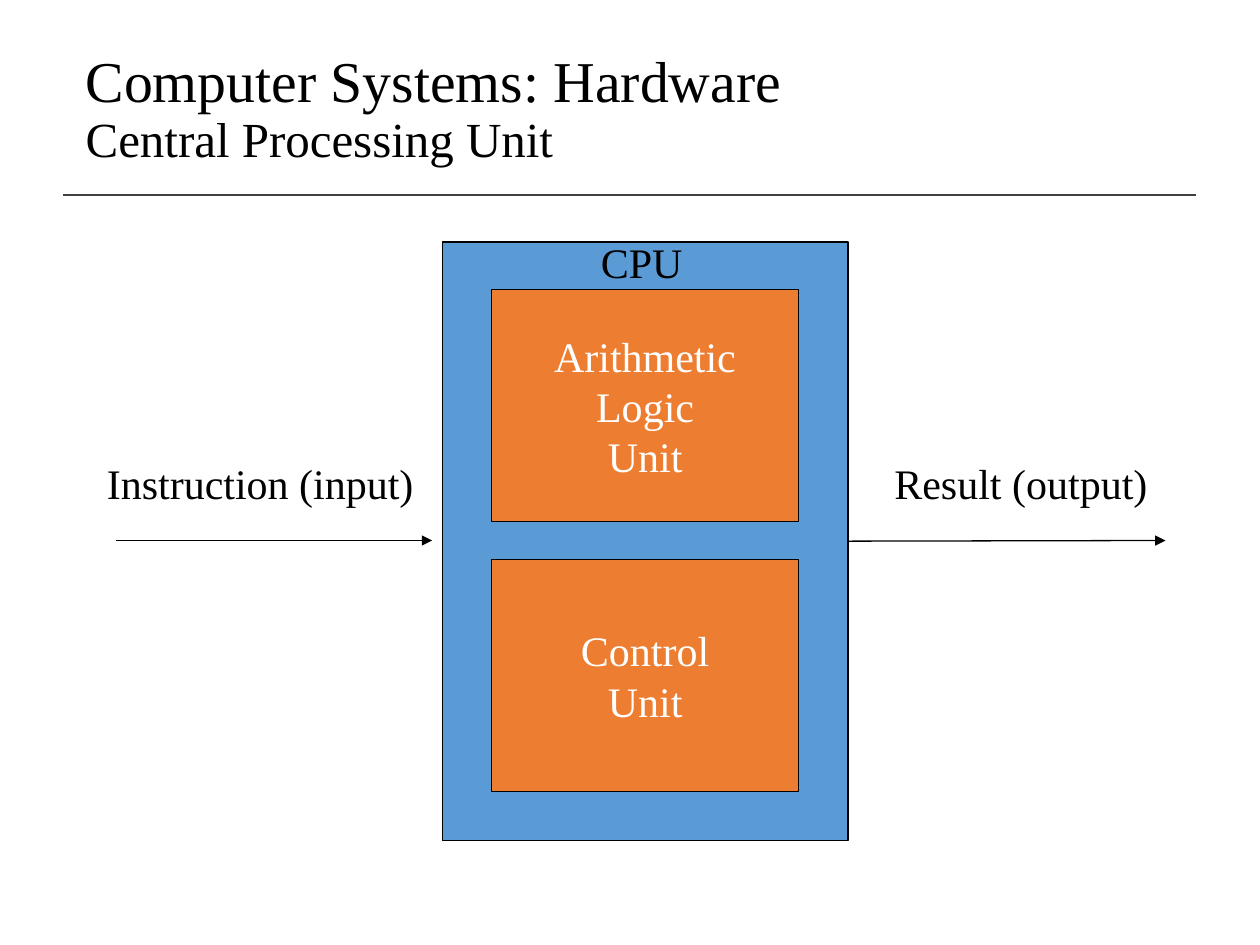
from dataclasses import dataclass
from lxml.etree import SubElement as Sub
from pptx import Presentation
from pptx.dml.color import RGBColor as Rgb
from pptx.enum.shapes import MSO_CONNECTOR as Link, MSO_SHAPE as Form
from pptx.enum.text import MSO_ANCHOR as Anchor, MSO_AUTO_SIZE as Fit, PP_ALIGN as Align
from pptx.oxml.ns import qn
from pptx.util import Inches, Pt


@dataclass(frozen=True)
class Theme:
    font: str = "Times New Roman"
    ink: str = "000000"
    rule: str = "404040"
    blue: str = "5B9BD5"
    orange: str = "ED7D31"
    white: str = "FFFFFF"
    head: int = 33
    sub: int = 28
    text: int = 24
    thin: float = 0.75


class Pen:
    """Draws styled elements on the current slide."""

    def __init__(self, theme, slide):
        self.theme = theme
        self.slide = slide
        self.shapes = slide.shapes

    def group(self):
        self.shapes = self.slide.shapes.add_group_shape().shapes

    def style(self, para, sizes, color):
        for run, size in zip(para.runs, sizes):
            run.font.name = self.theme.font
            run.font.size = Pt(size)
            run.font.color.rgb = Rgb.from_string(color)

    def title(self, text, box):
        shape = self.slide.shapes.title
        shape.left, shape.top, shape.width, shape.height = map(Inches, box)
        frame = shape.text_frame
        frame.text = text
        frame.auto_size = Fit.NONE
        frame.vertical_anchor = Anchor.MIDDLE
        para = frame.paragraphs[0]
        para.alignment = Align.LEFT
        para.line_spacing = 0.9
        self.style(para, (self.theme.head, self.theme.sub), self.theme.ink)

    def label(self, text, box, wrap=False):
        frame = self.shapes.add_textbox(*map(Inches, box)).text_frame
        frame.text = text
        frame.word_wrap = wrap
        frame.auto_size = Fit.SHAPE_TO_FIT_TEXT
        self.style(frame.paragraphs[0], [self.theme.text], self.theme.ink)

    def block(self, box, fill, text=""):
        shape = self.shapes.add_shape(Form.RECTANGLE, *map(Inches, box))
        shape.shadow.inherit = False
        shape.fill.solid()
        shape.fill.fore_color.rgb = Rgb.from_string(fill)
        shape.line.color.rgb = Rgb.from_string(self.theme.ink)
        shape.line.width = Pt(self.theme.thin)
        if text:
            frame = shape.text_frame
            frame.text = text
            frame.word_wrap = False
            frame.vertical_anchor = Anchor.MIDDLE
            for para in frame.paragraphs:
                para.alignment = Align.CENTER
                self.style(para, [self.theme.text] * len(para.runs), self.theme.white)
        return shape

    def line(self, left, right, y, color, width):
        link = self.shapes.add_connector(
            Link.STRAIGHT, Inches(left), Inches(y), Inches(right), Inches(y)
        )
        link.line.color.rgb = Rgb.from_string(color)
        link.line.width = Pt(width)
        Sub(link._element.spPr, qn("a:effectLst"))
        return link

    def arrow(self, left, right, y):
        link = self.line(left, right, y, self.theme.ink, self.theme.thin)
        Sub(link.line._get_or_add_ln(), qn("a:tailEnd"), type="triangle")
        return link


def main():
    deck = Presentation()
    deck.slide_width, deck.slide_height = Inches(10), Inches(7.5)
    theme = Theme()
    pen = Pen(theme, deck.slides.add_slide(deck.slide_layouts[5]))

    pen.line(0.5, 9.49, 1.55, theme.rule, 1)
    pen.title("Computer Systems: Hardware\vCentral Processing Unit", (0.58, 0.33, 9.42, 1.09))
    pen.label("Instruction (input)", (0.75, 3.58, 2.64, 0.5))
    pen.label("Result (output)", (7, 3.58, 2.21, 0.5))

    pen.group()
    cpu = pen.block((3.51, 1.92, 3.22, 4.75), theme.blue)
    units = "Arithmetic\vLogic\vUnit", "Control\nUnit"
    for row, unit in enumerate(units):
        pen.block((3.9, 2.3 + row * 2.14, 2.44, 1.84), theme.orange, unit)
    pen.arrow(0.92, 3.43, 4.29)
    pen.arrow(6.73, 9.25, 4.29).begin_connect(cpu, 3)
    pen.label("CPU", (4.67, 1.83, 0.85, 0.5), wrap=True)

    deck.save("out.pptx")


if __name__ == "__main__":
    main()
